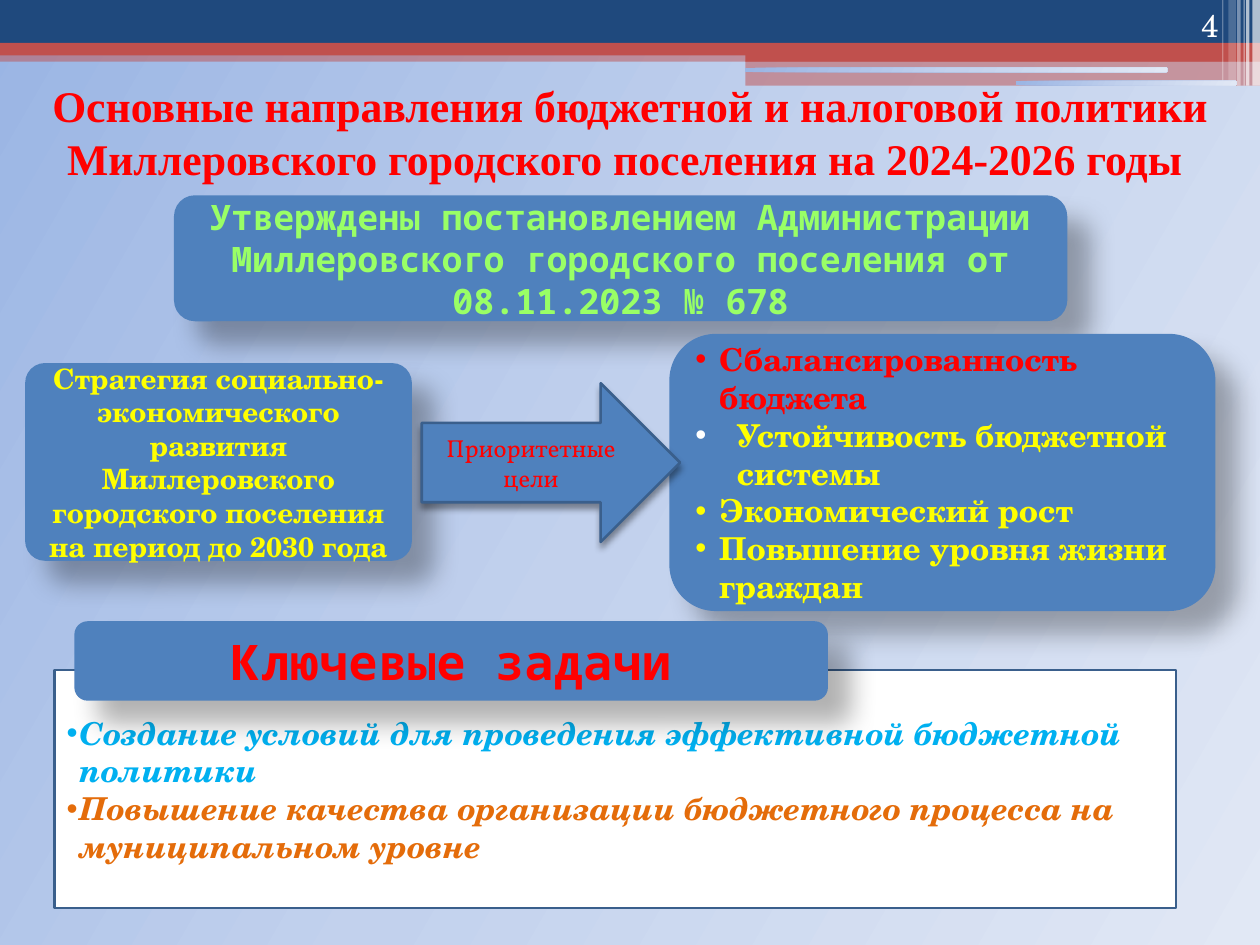
from lxml.etree import SubElement as Sub
from pptx import Presentation
from pptx.dml.color import RGBColor
from pptx.enum.shapes import MSO_SHAPE as Kind
from pptx.enum.text import MSO_ANCHOR as Anchor, PP_ALIGN as Align
from pptx.oxml.ns import qn
from pptx.util import Pt

SERIF = "TeX Gyre Schola"
MONO = "Noto Sans Mono"
BLUE, RED, YELLOW, WHITE = "4F81BD", "FF0000", "FFFF00", "FFFFFF"
NAVY, BRICK, EDGE = "1F497D", "C0504D", "3A5F8C"
SOFT = (30, 15, 18, 45)


def paint(hue):
    """Return the colour for a hex string."""
    return RGBColor.from_string(hue)


def blend(part):
    """Replace the solid fill of an element by the theme gradient."""
    solid = part.find(qn("a:solidFill"))
    grad = part.makeelement(qn("a:gradFill"), {"rotWithShape": "1"})
    stops = Sub(grad, qn("a:gsLst"))
    for spot, hue in ((0, "9AB5E4"), (50, "C2D1ED"), (100, "E1E8F5")):
        stop = Sub(stops, qn("a:gs"), pos=str(spot * 1000))
        Sub(stop, qn("a:srgbClr"), val=hue)
    Sub(grad, qn("a:lin"), ang=str(30 * 60000), scaled="0")
    part.replace(solid, grad)


def shade(shape, alpha, blur, dist, angle):
    """Give a shape a black outer shadow."""
    effect = shape._element.spPr.find(qn("a:effectLst"))
    outer = Sub(effect, qn("a:outerShdw"), blurRad=str(Pt(blur)),
                dist=str(Pt(dist)), dir=str(angle * 60000),
                algn="ctr", rotWithShape="0")
    tone = Sub(outer, qn("a:srgbClr"), val="000000")
    Sub(tone, qn("a:alpha"), val=str(alpha * 1000))


def block(slide, kind, box, hue, alpha=100, line=None, shadow=None, round=None):
    """Add a filled preset shape."""
    shape = slide.shapes.add_shape(kind, *map(Pt, box))
    shape.shadow.inherit = False
    shape.fill.solid()
    shape.fill.fore_color.rgb = paint(hue)
    if alpha < 100:
        tone = shape._element.spPr.find(qn("a:solidFill"))[0]
        Sub(tone, qn("a:alpha"), val=str(alpha * 1000))
    if line:
        shape.line.color.rgb = paint(line)
        shape.line.width = Pt(1.5)
    else:
        shape.line.fill.background()
    if shadow:
        shade(shape, *shadow)
    if round is not None:
        shape.adjustments[0] = round
    return shape


def label(slide, box):
    """Add an empty text box."""
    return slide.shapes.add_textbox(*map(Pt, box))


def write(shape, text, size=18, font=SERIF, hue=YELLOW, bold=True, italic=False,
          align=Align.CENTER, anchor=Anchor.MIDDLE, indent=0, dot=None):
    """Append a formatted paragraph, with a bullet when an indent is given."""
    frame = shape.text_frame
    frame.word_wrap = True
    frame.vertical_anchor = anchor
    para = frame.add_paragraph() if frame.text else frame.paragraphs[0]
    para.alignment = align
    run = para.add_run()
    run.text = text
    run.font.size = Pt(size)
    run.font.name = font
    run.font.bold = bold
    run.font.italic = italic
    run.font.color.rgb = paint(hue)
    if indent:
        prop = para._p.get_or_add_pPr()
        prop.set("marL", str(Pt(indent)))
        prop.set("indent", str(-Pt(indent)))
        Sub(Sub(prop, qn("a:buClr")), qn("a:srgbClr"), val=dot or hue)
        Sub(prop, qn("a:buFont"), typeface="Arial")
        Sub(prop, qn("a:buChar"), char="•")


def trim(slide):
    """Draw the bands and stripes along the top edge."""
    for box, hue, alpha in (
        ((0, 28.8, 720, 6.5), BRICK, 50),
        ((0, 0, 720, 24.5), NAVY, 100),
        ((0, 24.5, 720, 7.2), BRICK, 100),
        ((426, 28, 294, 7.2), BRICK, 100),
        ((426, 34.6, 294, 14.4), BRICK, 50),
    ):
        block(slide, Kind.RECTANGLE, box, hue, alpha)
    for box in ((425.5, 38.7, 241.5, 2.5), (580.5, 46.2, 126, 2.6)):
        bar = block(slide, Kind.ROUNDED_RECTANGLE, box, WHITE)
        blend(bar._element.spPr)
    for left, width, high, alpha in (
        (715.7, 4.3, 49, 65), (712, 2, 49, 65), (710.6, 0.7, 49, 60),
        (707, 2, 49, 40), (702, 4.3, 46, 20), (698.4, 0.7, 46, 30),
    ):
        block(slide, Kind.RECTANGLE, (left, 0, width, high), WHITE, alpha)


def head(slide):
    """Add the title, the page number and the decree box."""
    title = label(slide, (0, 71.3, 720, 34))
    title.text_frame.margin_bottom = Pt(30)
    write(title, "Основные направления бюджетной и налоговой политики "
          "Миллеровского городского поселения на 2024-2026 годы ",
          size=25, font="Times New Roman", hue=RED)
    page = label(slide, (643.7, 0, 59.8, 28.8))
    write(page, "4", hue=WHITE, bold=False, align=Align.RIGHT, anchor=Anchor.BOTTOM)
    decree = block(slide, Kind.ROUNDED_RECTANGLE, (99.4, 111.6, 510.5, 72), BLUE,
                   shadow=SOFT)
    write(decree, "Утверждены постановлением Администрации Миллеровского "
          "городского поселения от 08.11.2023 № 678",
          size=20, font=MONO, hue="99FF66")


def goals(slide):
    """Add the strategy box, the goals box and the arrow between them."""
    plan = block(slide, Kind.ROUNDED_RECTANGLE, (14.4, 207.5, 221, 113), BLUE,
                 shadow=SOFT, round=0.1)
    write(plan, "Стратегия социально-экономического развития Миллеровского "
          "городского поселения на период до 2030 года", size=16)
    aims = block(slide, Kind.ROUNDED_RECTANGLE, (382.5, 190.8, 312, 158.4), BLUE,
                 shadow=SOFT)
    for text, hue, indent, dot in (
        ("Сбалансированность бюджета", RED, 13.7, None),
        ("Устойчивость бюджетной системы", YELLOW, 23.7, WHITE),
        ("Экономический рост", YELLOW, 13.7, None),
        ("Повышение уровня жизни граждан", YELLOW, 13.7, None),
    ):
        write(aims, text, hue=hue, align=Align.LEFT, indent=indent, dot=dot)
    arrow = block(slide, Kind.RIGHT_ARROW, (241, 219, 147.6, 90.7), BLUE,
                  line=EDGE, shadow=(40, 4, 3, 90))
    write(arrow, "Приоритетные цели", size=14, font="Vollkorn", hue=RED, bold=False)


def tasks(slide):
    """Add the list of key tasks and its heading."""
    sheet = block(slide, Kind.RECTANGLE, (31, 383, 641, 136), WHITE, line=EDGE)
    for text, hue in (
        ("Создание условий для проведения эффективной бюджетной политики", "00B0F0"),
        ("Повышение качества организации бюджетного процесса "
         "на муниципальном уровне", "E46C0A"),
    ):
        write(sheet, text, hue=hue, italic=True, align=Align.LEFT, indent=7.2)
    top = block(slide, Kind.ROUNDED_RECTANGLE, (42.5, 355, 430.6, 45.4), BLUE,
                shadow=SOFT)
    write(top, "Ключевые задачи", size=28, font=MONO, hue=RED)


def main():
    """Build the slide and save it."""
    deck = Presentation()
    deck.slide_width, deck.slide_height = Pt(720), Pt(540)
    slide = deck.slides.add_slide(deck.slide_layouts[6])
    back = slide.background.fill
    back.solid()
    back.fore_color.rgb = paint(WHITE)
    blend(slide.element.cSld.find(qn("p:bg")).find(qn("p:bgPr")))
    for draw in (trim, head, goals, tasks):
        draw(slide)
    deck.save("out.pptx")


if __name__ == "__main__":
    main()
